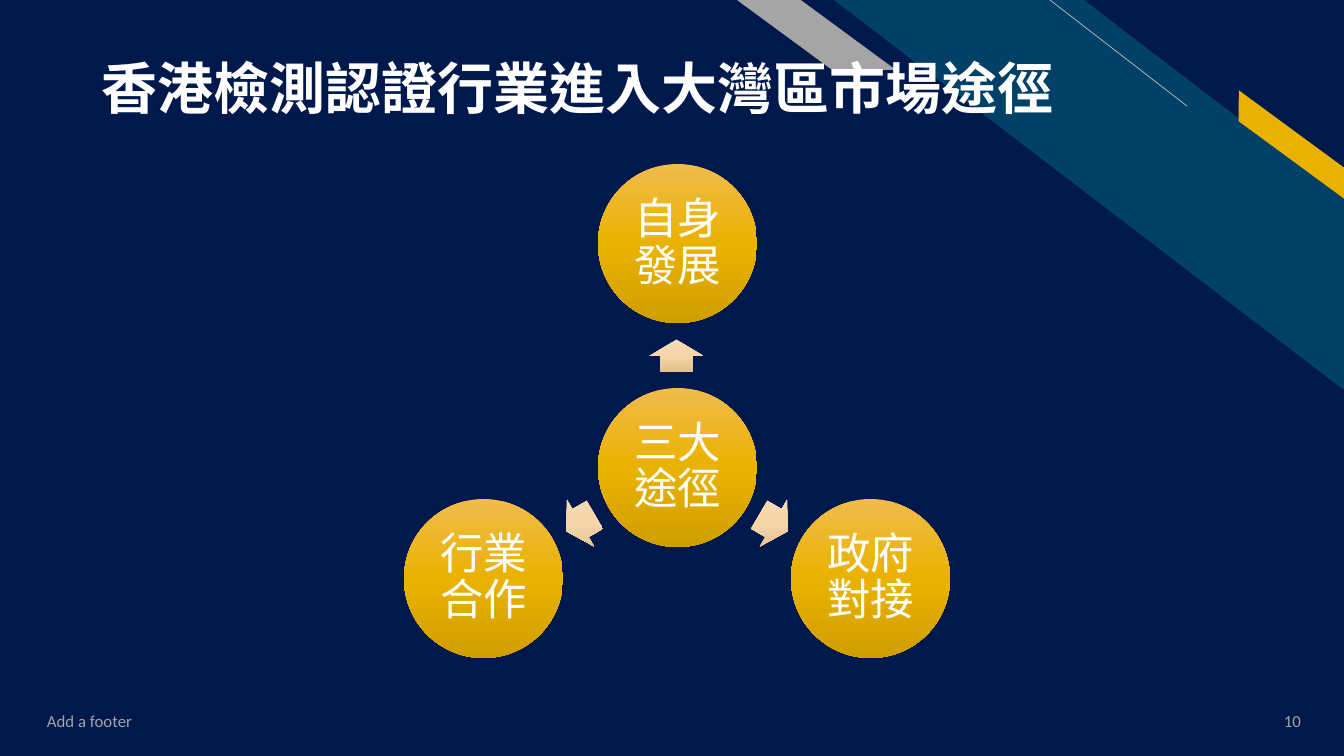
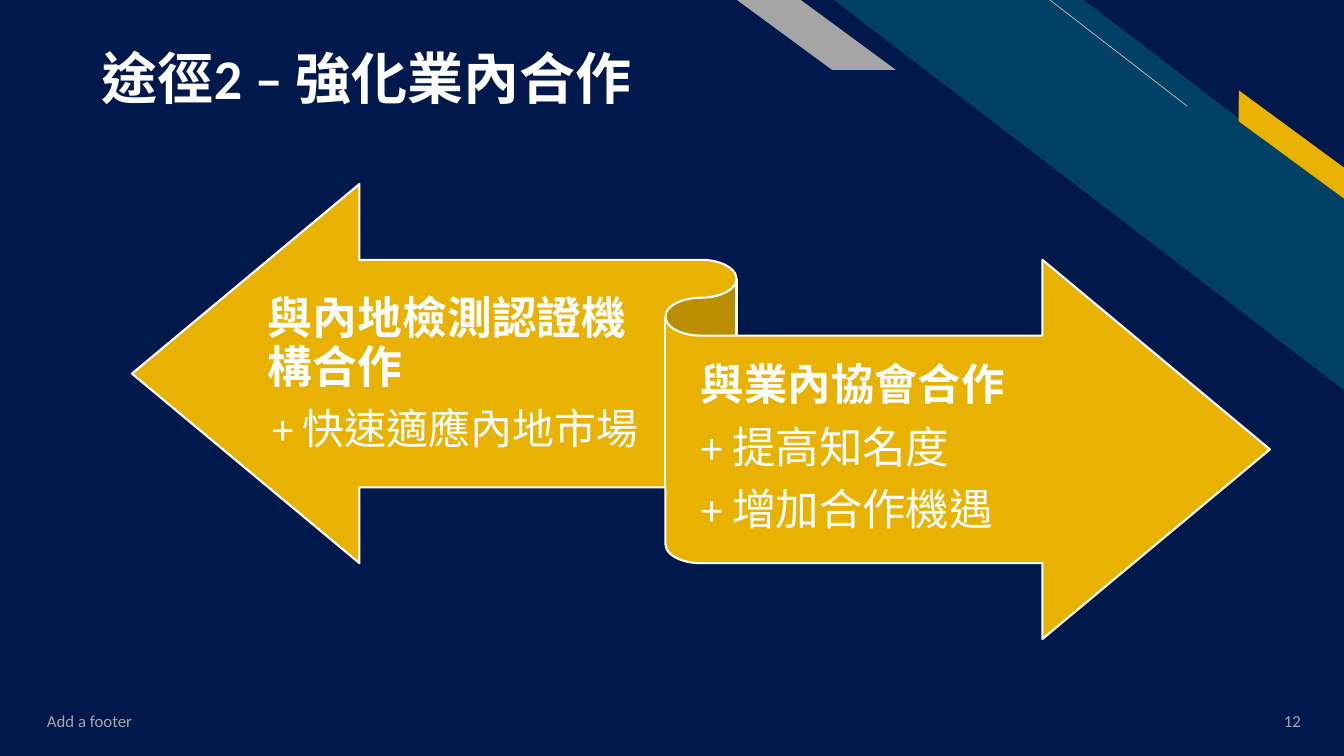
from dataclasses import dataclass
from math import cos, radians, sin
from typing import Any, NamedTuple

from lxml.etree import SubElement
from pptx import Presentation
from pptx.dml.color import RGBColor
from pptx.enum.lang import MSO_LANGUAGE_ID as Language
from pptx.enum.shapes import MSO_CONNECTOR as Connector
from pptx.enum.shapes import MSO_SHAPE as Preset
from pptx.enum.text import MSO_ANCHOR as Anchor
from pptx.enum.text import PP_ALIGN as Align
from pptx.oxml import parse_xml
from pptx.oxml.ns import nsdecls, qn
from pptx.util import Emu, Pt

# Shared look
EMU_PER_PX = 914400 / 100.8
PAGE_WIDTH, PAGE_HEIGHT = 1344, 756
FONT = "Calibri"
NAVY, TEAL, GOLD = "00194C", "014067", "EAB200"
GREY, PALE_GREY, WHITE = "A5A5A5", "BFBFBF", "FFFFFF"
CIRCLE_STOPS = ("F0BB4B", GOLD, "D09E00")
ARROW_STOPS = ("F5DBB7", "F6D6A8", "E0BF90")


class Frame(NamedTuple):
    left: int
    top: int
    width: int
    height: int


class Insets(NamedTuple):
    left: int = 10
    top: int = 5
    right: int = 10
    bottom: int = 5


@dataclass
class Line:
    text: str
    size: int
    colour: str = WHITE
    bold: bool = False
    align: Align = Align.LEFT
    spacing: float = 1.0
    after: int = 0
    asian_font: str = ""


@dataclass
class Band:
    preset: Preset
    frame: Frame
    adjustment: float
    colour: str
    rotation: float = 0


@dataclass
class Satellite:
    text: str
    angle: int


BANDS = [
    Band(Preset.DIAGONAL_STRIPE, Frame(834, 0, 510, 390), 0.51, TEAL),
    Band(Preset.PARALLELOGRAM, Frame(1217, 132, 149, 25), 0.72, GOLD, 36.3),
    Band(Preset.PARALLELOGRAM, Frame(737, 0, 159, 70), 1.36, GREY),
]
SATELLITES = [
    Satellite("自身發展", 270),
    Satellite("政府對接", 30),
    Satellite("行業合作", 150),
]


def px(length: float) -> Emu:
    return Emu(round(length * EMU_PER_PX))


def rgb(colour: str) -> RGBColor:
    return RGBColor.from_string(colour)


def centred(x: float, y: float, width: int, height: int) -> Frame:
    return Frame(round(x - width / 2), round(y - height / 2), width, height)


def apply(target: Any, values: dict[str, Any]) -> None:
    for name, value in values.items():
        setattr(target, name, value)


# Drawing helpers
def add_preset(page: Any, preset: Preset, frame: Frame, colour: str = "") -> Any:
    shape = page.shapes.add_shape(preset, *map(px, frame))
    shape.shadow.inherit = False
    shape.line.fill.background()
    if colour:
        shape.fill.solid()
        shape.fill.fore_color.rgb = rgb(colour)
    return shape


def fill_gradient(shape: Any, colours: tuple[str, ...]) -> None:
    """Evenly spaced stops from top to bottom, whatever the rotation."""
    stops = "".join(
        f'<a:gs pos="{100000 * index // (len(colours) - 1)}">'
        f'<a:srgbClr val="{colour}"/></a:gs>'
        for index, colour in enumerate(colours)
    )
    gradient = parse_xml(
        f'<a:gradFill {nsdecls("a")} rotWithShape="0"><a:gsLst>{stops}</a:gsLst>'
        '<a:lin ang="5400000" scaled="0"/></a:gradFill>'
    )
    shape._element.spPr.find(qn("a:prstGeom")).addnext(gradient)


def write(box: Any, lines: list[Line], insets: Insets, anchor: Anchor) -> None:
    frame = box.text_frame
    apply(frame, {
        "word_wrap": True,
        "vertical_anchor": anchor,
        "margin_left": px(insets.left),
        "margin_top": px(insets.top),
        "margin_right": px(insets.right),
        "margin_bottom": px(insets.bottom),
    })
    for index, line in enumerate(lines):
        para = frame.add_paragraph() if index else frame.paragraphs[0]
        apply(para, {
            "alignment": line.align,
            "line_spacing": line.spacing,
            "space_after": Pt(line.after),
        })
        span = para.add_run()
        span.text = line.text
        apply(span.font, {
            "name": FONT,
            "size": Pt(line.size),
            "bold": line.bold,
            "language_id": Language.CHINESE_HONG_KONG_SAR,
        })
        span.font.color.rgb = rgb(line.colour)
        if line.asian_font:
            properties = span._r.get_or_add_rPr()
            SubElement(properties, qn("a:ea")).set("typeface", line.asian_font)


def add_text(page: Any, frame: Frame, lines: list[Line],
             insets: Insets = Insets(), anchor: Anchor = Anchor.MIDDLE) -> None:
    write(page.shapes.add_textbox(*map(px, frame)), lines, insets, anchor)


def body(text: str, size: int = 31, bold: bool = False,
         align: Align = Align.LEFT) -> Line:
    return Line(text, size, bold=bold, align=align, spacing=0.9,
                after=11, asian_font=FONT)


# Background, bands, title and footer of every page
def add_page(deck: Any, title: str, title_top: int, number: int) -> Any:
    page = deck.slides.add_slide(deck.slide_layouts[6])
    page.background.fill.solid()
    page.background.fill.fore_color.rgb = rgb(NAVY)

    for band in BANDS:
        shape = add_preset(page, band.preset, band.frame, band.colour)
        shape.adjustments[0] = band.adjustment
        shape.rotation = band.rotation
        shape._element.spPr.find(qn("a:xfrm")).set("flipH", "1")

    hairline = page.shapes.add_connector(
        Connector.STRAIGHT, px(1187), px(106), px(1050), px(0))
    hairline.line.color.rgb = rgb(PALE_GREY)
    hairline.line.width = Pt(0.5)
    SubElement(hairline._element.spPr, qn("a:effectLst"))

    add_text(page, Frame(37, 701, 454, 40), [Line("Add a footer", 12, GREY)])
    add_text(page, Frame(1229, 701, 82, 40),
             [Line(str(number), 12, GREY, align=Align.RIGHT)])
    add_text(page, Frame(92, title_top, 1219, 78),
             [Line(title, 40, bold=True, spacing=0.9)], anchor=Anchor.TOP)
    return page


# Three routes around a hub
def add_circle(page: Any, x: float, y: float, text: str) -> None:
    circle = add_preset(page, Preset.OVAL, centred(x, y, 159, 159))
    fill_gradient(circle, CIRCLE_STOPS)
    write(circle, [body(text, align=Align.CENTER)], Insets(4, 4, 4, 4),
          Anchor.MIDDLE)


def add_routes(deck: Any) -> None:
    page = add_page(deck, "香港檢測認證行業進入大灣區市場途徑", 56, 10)
    hub_x, hub_y, orbit, arrow_orbit = 677, 467, 223, 111
    add_circle(page, hub_x, hub_y, "三大途徑")
    for satellite in SATELLITES:
        across = cos(radians(satellite.angle))
        down = sin(radians(satellite.angle))
        arrow = add_preset(page, Preset.RIGHT_ARROW, centred(
            hub_x + arrow_orbit * across, hub_y + arrow_orbit * down, 33, 54))
        arrow.adjustments[0] = 0.6
        arrow.adjustments[1] = 0.5
        arrow.rotation = satellite.angle
        fill_gradient(arrow, ARROW_STOPS)
        add_circle(page, hub_x + orbit * across, hub_y + orbit * down,
                   satellite.text)


# Two-way ribbon of cooperation
def add_cooperation(deck: Any) -> None:
    page = add_page(deck, "途徑2 – 強化業內合作", 46, 12)
    ribbon = add_preset(page, Preset.LEFT_RIGHT_RIBBON,
                        Frame(132, 184, 1138, 455), GOLD)
    ribbon.line.color.rgb = rgb(WHITE)
    ribbon.line.width = Pt(1.5)
    insets = Insets(0, 12, 0, 13)
    add_text(page, Frame(268, 264, 375, 223), [
        body("與內地檢測認證機構合作", 32, bold=True),
        body("+ 快速適應內地市場", 30, align=Align.CENTER),
    ], insets)
    add_text(page, Frame(701, 338, 444, 223), [
        body("與業內協會合作", bold=True),
        body("+ 提高知名度"),
        body("+ 增加合作機遇"),
    ], insets)


def main() -> None:
    deck = Presentation()
    deck.slide_width, deck.slide_height = px(PAGE_WIDTH), px(PAGE_HEIGHT)
    add_routes(deck)
    add_cooperation(deck)
    deck.save("out.pptx")


if __name__ == "__main__":
    main()
